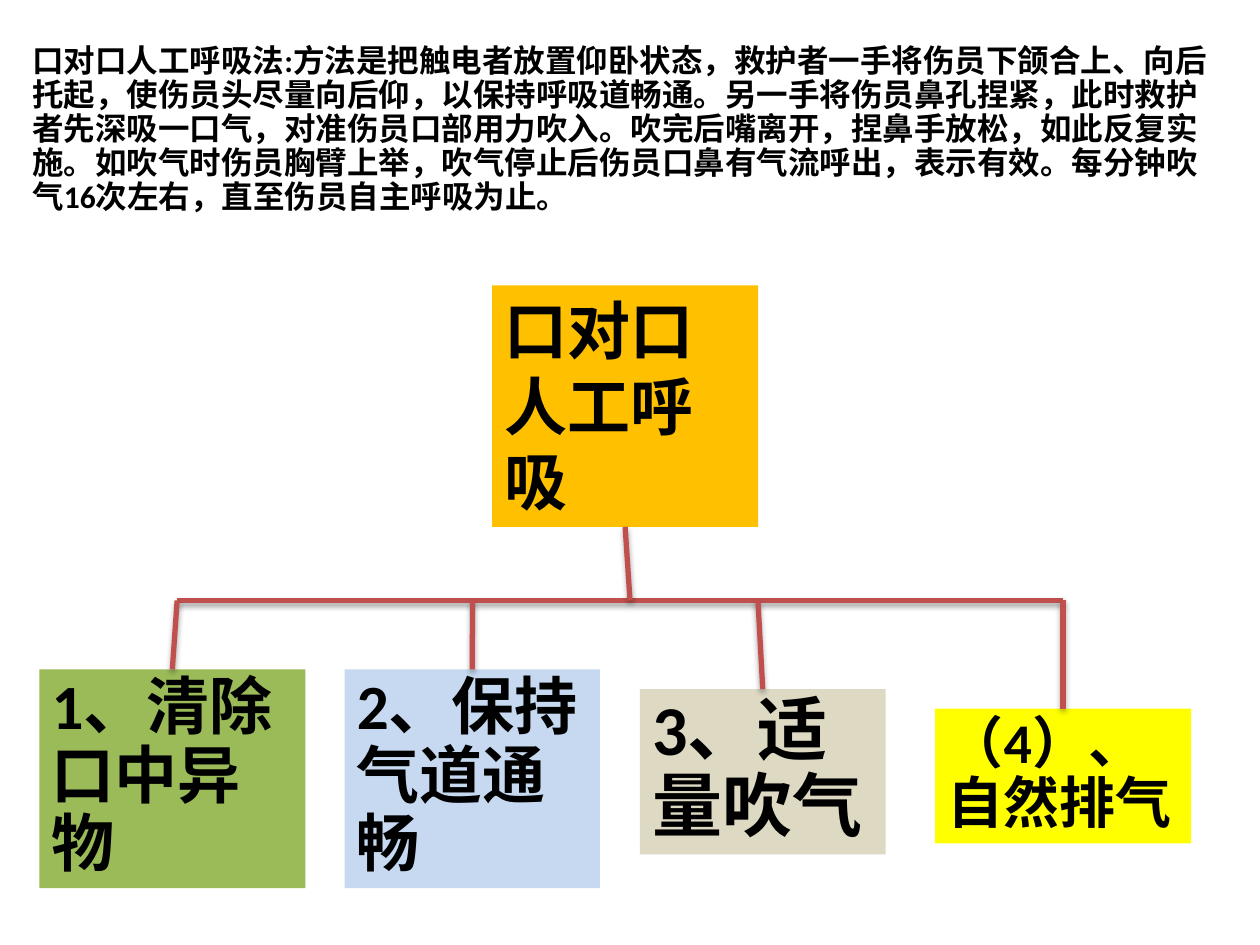
from lxml.etree import SubElement
from pptx import Presentation
from pptx.dml.color import RGBColor
from pptx.enum.shapes import MSO_CONNECTOR, MSO_SHAPE
from pptx.enum.text import MSO_ANCHOR, MSO_AUTO_SIZE, PP_ALIGN
from pptx.oxml import parse_xml
from pptx.oxml.ns import qn
from pptx.util import Pt

BLACK = RGBColor(0, 0, 0)
RED = RGBColor(0xC0, 0x50, 0x4D)
GREEN = RGBColor(0x9B, 0xBB, 0x59)
BLUE = RGBColor(0xC6, 0xD9, 0xF1)
TAN = RGBColor(0xDD, 0xD9, 0xC3)
YELLOW = RGBColor(0xFF, 0xFF, 0)
ORANGE = RGBColor(0xFF, 0xC0, 0)
LATIN, CHINESE = "Calibri", "Noto Sans CJK SC"

INTRO = (
    "口对口人工呼吸法:方法是把触电者放置仰卧状态，救护者一手将伤员下颌合上、向后托起，"
    "使伤员头尽量向后仰，以保持呼吸道畅通。另一手将伤员鼻孔捏紧，此时救护者先深吸一口气，"
    "对准伤员口部用力吹入。吹完后嘴离开，捏鼻手放松，如此反复实施。如吹气时伤员胸臂上举，"
    "吹气停止后伤员口鼻有气流呼出，表示有效。每分钟吹气16次左右，直至伤员自主呼吸为止。"
)
INTRO_PLACE = (11.5, 22.5, 692, 105)
ROOT = ("口对口人工呼吸", ORANGE, 36, (281.25, 163.12, 152, 138))
STEPS = [
    ("1、清除口中异物", GREEN, 36, (22.5, 382.5, 152, 125), 101.25),
    ("2、保持气道通畅", BLUE, 36, (196.88, 382.5, 146, 125), 270),
    ("3、适量吹气", TAN, 40, (365.62, 393.75, 140.5, 94.5), 433.12),
    ("（4）、自然排气", YELLOW, 32, (534.38, 405, 146.25, 77), 607.5),
]
BAR_TOP = 343.12
TRUNK_FOOT = 360

SHADOW = (
    '<a:effectLst xmlns:a="http://schemas.openxmlformats.org/drawingml/2006/main">'
    '<a:outerShdw blurRad="40000" dist="23000" dir="5400000" rotWithShape="0">'
    '<a:srgbClr val="000000"><a:alpha val="35000"/></a:srgbClr>'
    "</a:outerShdw></a:effectLst>"
)


def write(box, text, size, spacing=0.9, font=LATIN):
    frame = box.text_frame
    frame.text = text
    frame.word_wrap = True
    frame.auto_size = MSO_AUTO_SIZE.SHAPE_TO_FIT_TEXT
    frame.vertical_anchor = MSO_ANCHOR.TOP
    para = frame.paragraphs[0]
    para.alignment = PP_ALIGN.LEFT
    para.line_spacing = spacing
    span = para.runs[0]
    span.font.size = Pt(size)
    span.font.bold = True
    span.font.color.rgb = BLACK
    span.font.name = font
    SubElement(span.font._element, qn("a:ea")).set("typeface", CHINESE)


def add_block(page, text, color, size, place, **style):
    box = page.shapes.add_shape(MSO_SHAPE.RECTANGLE, *map(Pt, place))
    box.shadow.inherit = False
    box.fill.solid()
    box.fill.fore_color.rgb = color
    box.line.fill.background()
    write(box, text, size, **style)


def add_link(page, *ends):
    link = page.shapes.add_connector(MSO_CONNECTOR.STRAIGHT, *map(Pt, ends))
    link.line.color.rgb = RED
    link.line.width = Pt(3)
    link._element.spPr.append(parse_xml(SHADOW))


def main():
    """Build the mouth-to-mouth resuscitation slide."""
    deck = Presentation()
    deck.slide_width, deck.slide_height = Pt(720), Pt(540)
    page = deck.slides.add_slide(deck.slide_layouts[6])

    for text, color, size, place, _ in STEPS:
        add_block(page, text, color, size, place)
    add_block(page, *ROOT, spacing=1.0, font=CHINESE)
    intro = page.shapes.add_textbox(*map(Pt, INTRO_PLACE))
    write(intro, INTRO, 18)

    left, top, width, height = ROOT[3]
    add_link(page, STEPS[-1][4], BAR_TOP, STEPS[0][4], BAR_TOP)
    add_link(page, left + width / 2, top + height, TRUNK_FOOT, BAR_TOP)
    for _, _, _, (left, top, width, _), branch in STEPS:
        add_link(page, branch, BAR_TOP, left + width / 2, top)

    deck.save("out.pptx")


if __name__ == "__main__":
    main()
